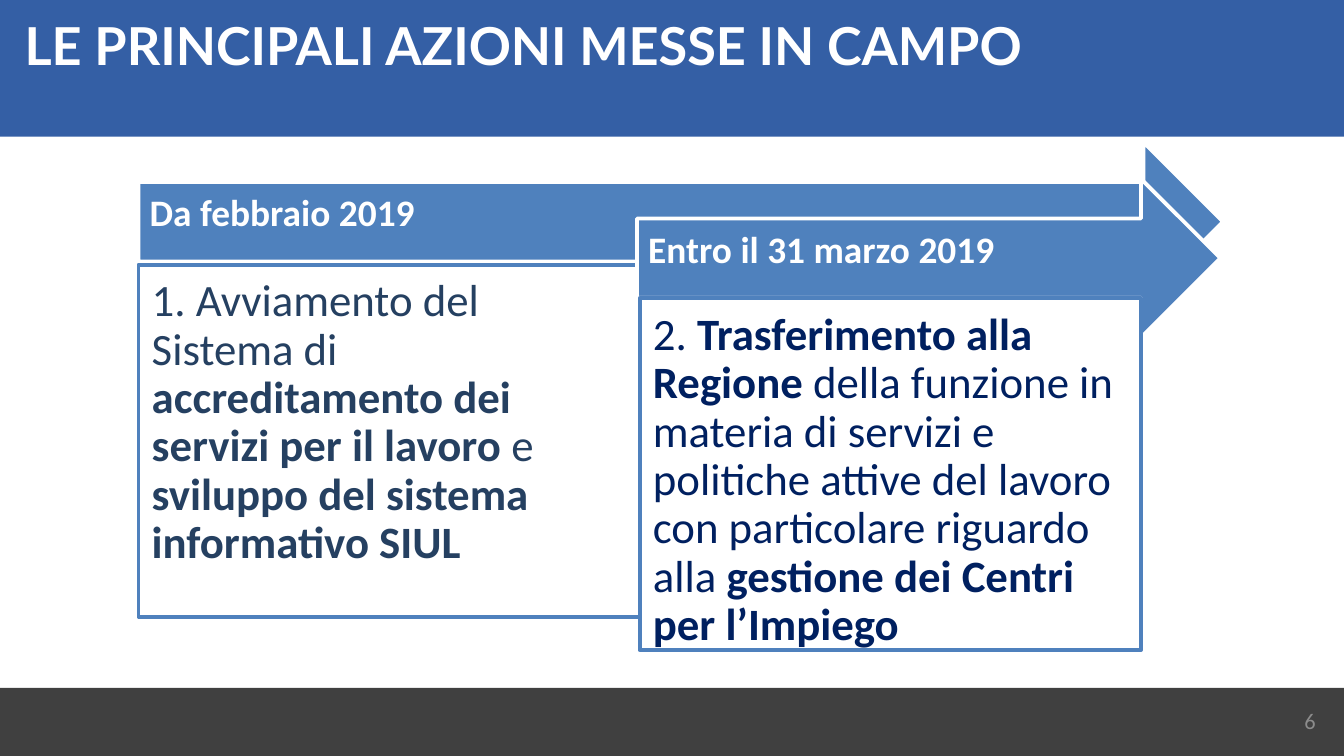
from pptx import Presentation
from pptx.dml.color import RGBColor
from pptx.enum.shapes import MSO_SHAPE
from pptx.enum.text import MSO_ANCHOR, PP_ALIGN
from pptx.util import Pt

RECT, ARROW = MSO_SHAPE.RECTANGLE, MSO_SHAPE.RIGHT_ARROW
TOP, MIDDLE = MSO_ANCHOR.TOP, MSO_ANCHOR.MIDDLE
LEFT, RIGHT = PP_ALIGN.LEFT, PP_ALIGN.RIGHT
WHITE, BLUE, NAVY, GREY = "FFFFFF", "4F81BD", "345FA5", "404040"
WIDTH, HEIGHT = 720, 405


def color(code):
    return RGBColor.from_string(code)


def write(shape, runs, size, ink, font="Calibri", anchor=TOP, align=LEFT,
          inset=(7.2, 3.6, 7.2, 3.6), line=None):
    """Fill a shape with one paragraph of (text, bold) runs."""
    frame = shape.text_frame
    frame.word_wrap = True
    frame.vertical_anchor = anchor
    (frame.margin_left, frame.margin_top,
     frame.margin_right, frame.margin_bottom) = map(Pt, inset)
    para = frame.paragraphs[0]
    para.alignment = align
    para.line_spacing = line
    for text, bold in runs:
        run = para.add_run()
        run.text = text
        run.font.name = font
        run.font.size = Pt(size)
        run.font.bold = bold
        run.font.color.rgb = color(ink)


def draw(slide, kind, box, fill, edge=None):
    shape = slide.shapes.add_shape(kind, *map(Pt, box))
    shape.shadow.inherit = False
    shape.fill.solid()
    shape.fill.fore_color.rgb = color(fill)
    if edge:
        shape.line.color.rgb = color(edge)
        shape.line.width = Pt(2)
    else:
        shape.line.fill.background()
    return shape


def header(slide, box, text):
    x, y, w, h = box
    band = draw(slide, RECT, box, NAVY)
    title = slide.shapes.title
    band._element.addnext(title._element)
    title.left, title.top = Pt(x + 6), Pt(y + 3)
    title.width, title.height = Pt(648), Pt(42)
    write(title, [(text, True)], 28, WHITE, font="Lato", anchor=MIDDLE)


def footer(slide, box, number):
    x, y, w, h = box
    draw(slide, RECT, box, GREY)
    label = slide.shapes.add_textbox(Pt(x + w - 232), Pt(y + 6.5), Pt(224), Pt(21.6))
    write(label, [(number, False)], 12, "8C8C8C", anchor=MIDDLE, align=RIGHT)


def step(slide, box, shift, date, runs, ink):
    """Arrow with a date in box, and a card shifted down from its corner."""
    x, y, w, h = box
    arrow = draw(slide, ARROW, box, BLUE, WHITE)
    write(arrow, [(date, True)], 20, WHITE, anchor=MIDDLE,
          inset=(6, 6, 20, 13.5), line=0.9)
    card = draw(slide, RECT, (x + shift[0], y + shift[1], 268.5, 188.6), WHITE, BLUE)
    write(card, runs, 24, ink, inset=(7.2,) * 4, line=0.9)


def main():
    deck = Presentation()
    deck.slide_width, deck.slide_height = Pt(WIDTH), Pt(HEIGHT)
    slide = deck.slides.add_slide(deck.slide_layouts[5])
    footer(slide, (0, 368.6, WIDTH, 36.4), "6")
    header(slide, (0, 0, WIDTH, 73.2), "LE PRINCIPALI AZIONI MESSE IN CAMPO")
    step(slide, (74.2, 76.3, 581, 85), (0, 65.5), "Da febbraio 2019", [
        ("1. Avviamento del Sistema di ", False),
        ("accreditamento dei servizi per il lavoro ", True),
        ("e", False),
        (" sviluppo del sistema informativo SIUL", True),
    ], "254061")
    step(slide, (341.3, 95.8, 312.5, 85), (1.4, 64), "Entro il 31 marzo 2019", [
        ("2. ", False),
        ("Trasferimento alla Regione", True),
        (" della funzione in materia di servizi e politiche attive del lavoro"
         " con particolare riguardo alla ", False),
        ("gestione dei Centri per l’Impiego", True),
    ], "002060")
    deck.save("out.pptx")


if __name__ == "__main__":
    main()
